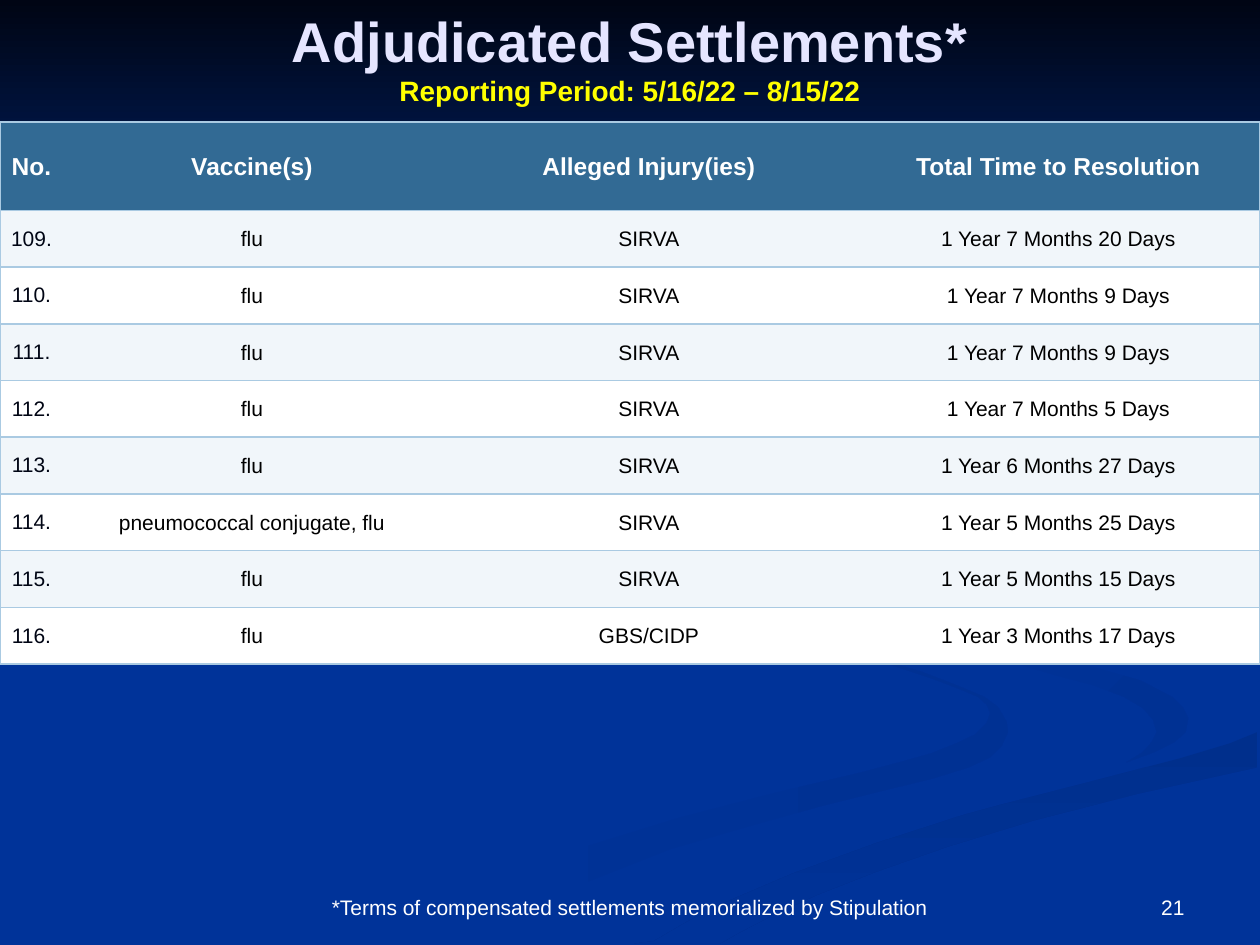
from lxml import etree
from pptx import Presentation
from pptx.dml.color import RGBColor
from pptx.enum.shapes import MSO_SHAPE
from pptx.enum.text import MSO_ANCHOR, PP_ALIGN
from pptx.oxml.ns import qn
from pptx.util import Inches, Pt

CENTER, RIGHT = PP_ALIGN.CENTER, PP_ALIGN.RIGHT
MIDDLE, BOTTOM = MSO_ANCHOR.MIDDLE, MSO_ANCHOR.BOTTOM
FONT = "Arial"
NO_STYLE = "{2D5ABB26-0587-4C30-8999-92F81FD0307C}"
COLORS = {
    "blue": "003399", "night": "000514", "ribbon": "003193", "shade": "002F8C",
    "lavender": "E5E5FF", "yellow": "FFFF00", "white": "FFFFFF", "black": "000000",
    "header": "326A94", "stripe": "F1F6FA", "border": "AACAE2",
}

# Content
TITLE = "Adjudicated Settlements*"
PERIOD = "Reporting Period: 5/16/22 – 8/15/22"
FOOTNOTE = "*Terms of compensated settlements memorialized by Stipulation"
PAGE_NUMBER = "21"
HEADERS = ["No.", "Vaccine(s)", "Alleged Injury(ies)", "Total Time to Resolution"]
FIRST_CASE = 109
CASES = [
    ("flu", "SIRVA", "1 Year 7 Months 20 Days"),
    ("flu", "SIRVA", "1 Year 7 Months 9 Days"),
    ("flu", "SIRVA", "1 Year 7 Months 9 Days"),
    ("flu", "SIRVA", "1 Year 7 Months 5 Days"),
    ("flu", "SIRVA", "1 Year 6 Months 27 Days"),
    ("pneumococcal conjugate, flu", "SIRVA", "1 Year 5 Months 25 Days"),
    ("flu", "SIRVA", "1 Year 5 Months 15 Days"),
    ("flu", "GBS/CIDP", "1 Year 3 Months 17 Days"),
]
COLUMN_WIDTHS = [0.5, 3, 3.3, 3.2]
HEADER_HEIGHT, ROW_HEIGHT, TABLE_TOP = 0.7, 0.45, 0.97

# Background ribbons: start colour, end colour, clockwise angle, outline in 1/100 inch
RIBBONS = [
    ("blue", "ribbon", 0, [
        (781, 553), (757, 543), (731, 533), (682, 519), (642, 507), (614, 496),
        (594, 485), (579, 473), (574, 464), (575, 459), (570, 468), (572, 476),
        (581, 484), (602, 495), (631, 505), (679, 519), (714, 530), (741, 539),
        (762, 547), (776, 553), (783, 559), (786, 566), (783, 574), (774, 583),
        (759, 590), (739, 598), (714, 605), (684, 613), (616, 629), (539, 649),
        (458, 674), (417, 690), (376, 707), (338, 727), (300, 749), (361, 749),
        (396, 731), (431, 714), (466, 700), (532, 674), (594, 656), (651, 640),
        (699, 628), (740, 618), (769, 609), (786, 601), (795, 592), (800, 581),
        (799, 573), (792, 561)]),
    ("blue", "ribbon", 45, [
        (943, 570), (939, 562), (930, 553), (905, 540), (870, 530), (811, 515),
        (774, 503), (745, 490), (730, 479), (724, 464), (725, 474), (733, 488),
        (746, 500), (766, 512), (797, 524), (838, 536), (868, 544), (892, 553),
        (907, 562), (915, 571), (918, 581), (914, 589), (907, 597), (894, 605),
        (916, 597), (932, 589), (941, 581)]),
    ("shade", "blue", 90, [
        (519, 747), (503, 749), (571, 749), (587, 740), (614, 726), (649, 710),
        (695, 692), (752, 672), (821, 651), (903, 630), (998, 609), (998, 581),
        (976, 590), (936, 602), (867, 620), (797, 638), (764, 647), (696, 669),
        (630, 693), (569, 719), (543, 733)]),
]


def rgb(name):
    return RGBColor.from_string(COLORS[name])


def paint_gradient(shape, start, end, angle):
    shape.shadow.inherit = False
    shape.line.fill.background()
    shape.fill.gradient()
    shape.fill.gradient_angle = (360 - angle) % 360
    for stop, name in zip(shape.fill.gradient_stops, (start, end)):
        stop.color.rgb = rgb(name)


def style_span(span, size, color, bold=False):
    span.font.name, span.font.size, span.font.bold = FONT, Pt(size), bold
    span.font.color.rgb = rgb(color)


def add_label(page, text, left, top, width, height, align):
    box = page.shapes.add_textbox(*map(Inches, (left, top, width, height)))
    frame = box.text_frame
    frame.word_wrap, frame.vertical_anchor = True, BOTTOM
    frame.text = text
    frame.paragraphs[0].alignment = align
    style_span(frame.paragraphs[0].runs[0], 12, "white")


def set_borders(cell, sides):
    properties = cell._tc.get_or_add_tcPr()
    for position, side in enumerate(sides):
        line = etree.Element(qn(f"a:ln{side}"), w=str(Pt(1)))
        fill = etree.SubElement(line, qn("a:solidFill"))
        etree.SubElement(fill, qn("a:srgbClr"), val=COLORS["border"])
        properties.insert(position, line)


def fill_cell(cell, text, fill, size, color, bold, margin, sides):
    cell.fill.solid()
    cell.fill.fore_color.rgb = rgb(fill)
    cell.vertical_anchor = MIDDLE
    cell.margin_left = cell.margin_right = cell.margin_top = Inches(margin)
    cell.margin_bottom = 0
    cell.text_frame.text = text
    para = cell.text_frame.paragraphs[0]
    para.alignment = CENTER
    style_span(para.runs[0], size, color, bold)
    set_borders(cell, sides)


def add_background(page):
    page.background.fill.solid()
    page.background.fill.fore_color.rgb = rgb("blue")
    for start, end, angle, points in RIBBONS:
        builder = page.shapes.build_freeform(*points[0], scale=Inches(0.01))
        builder.add_line_segments(points[1:], close=True)
        paint_gradient(builder.convert_to_shape(), start, end, angle)
    band = page.shapes.add_shape(MSO_SHAPE.RECTANGLE, 0, 0, Inches(10), Inches(3.08))
    paint_gradient(band, "night", "blue", 90)


def add_title(page):
    title = page.shapes.title
    title.left, title.top, title.width, title.height = 0, 0, Inches(10), Inches(0.9)
    title.element.getparent().append(title.element)  # bring in front of the background
    title.text_frame.vertical_anchor = MIDDLE
    para = title.text_frame.paragraphs[0]
    para.alignment = CENTER
    for text, size, color in [(TITLE, 32, "lavender"), (PERIOD, 16, "yellow")]:
        if para.runs:
            para.add_line_break()
        span = para.add_run()
        span.text = text
        style_span(span, size, color, True)
    line_break = para._p.find(qn("a:br"))
    etree.SubElement(line_break, qn("a:rPr"), sz="3200")


def add_cases(page):
    rows = [HEADERS] + [(f"{FIRST_CASE + i}.", *case) for i, case in enumerate(CASES)]
    height = HEADER_HEIGHT + ROW_HEIGHT * len(CASES)
    table = page.shapes.add_table(len(rows), len(HEADERS), 0, Inches(TABLE_TOP),
                                  Inches(10), Inches(height)).table
    table._tbl.tblPr.find(qn("a:tableStyleId")).text = NO_STYLE
    for column, width in zip(table.columns, COLUMN_WIDTHS):
        column.width = Inches(width)
    for r, row in enumerate(rows):
        header = r == 0
        table.rows[r].height = Inches(HEADER_HEIGHT if header else ROW_HEIGHT)
        fill = "header" if header else "stripe" if r % 2 else "white"
        for c, text in enumerate(row):
            number = c == 0 and not header
            color = "white" if header else "night" if number else "black"
            sides = "LTB" if c == 0 else "RTB" if c == len(row) - 1 else "TB"
            fill_cell(table.cell(r, c), text, fill, 14 if header else 12, color,
                      header, 0 if number else 0.01, sides)


def main():
    deck = Presentation()
    deck.slide_width, deck.slide_height = Inches(10), Inches(7.5)
    page = deck.slides.add_slide(deck.slide_layouts[5])
    add_background(page)
    add_label(page, PAGE_NUMBER, 7.17, 6.83, 2.33, 0.52, RIGHT)
    add_title(page)
    add_label(page, FOOTNOTE, 2.5, 7, 5, 0.35, CENTER)
    add_cases(page)
    deck.save("out.pptx")


if __name__ == "__main__":
    main()
